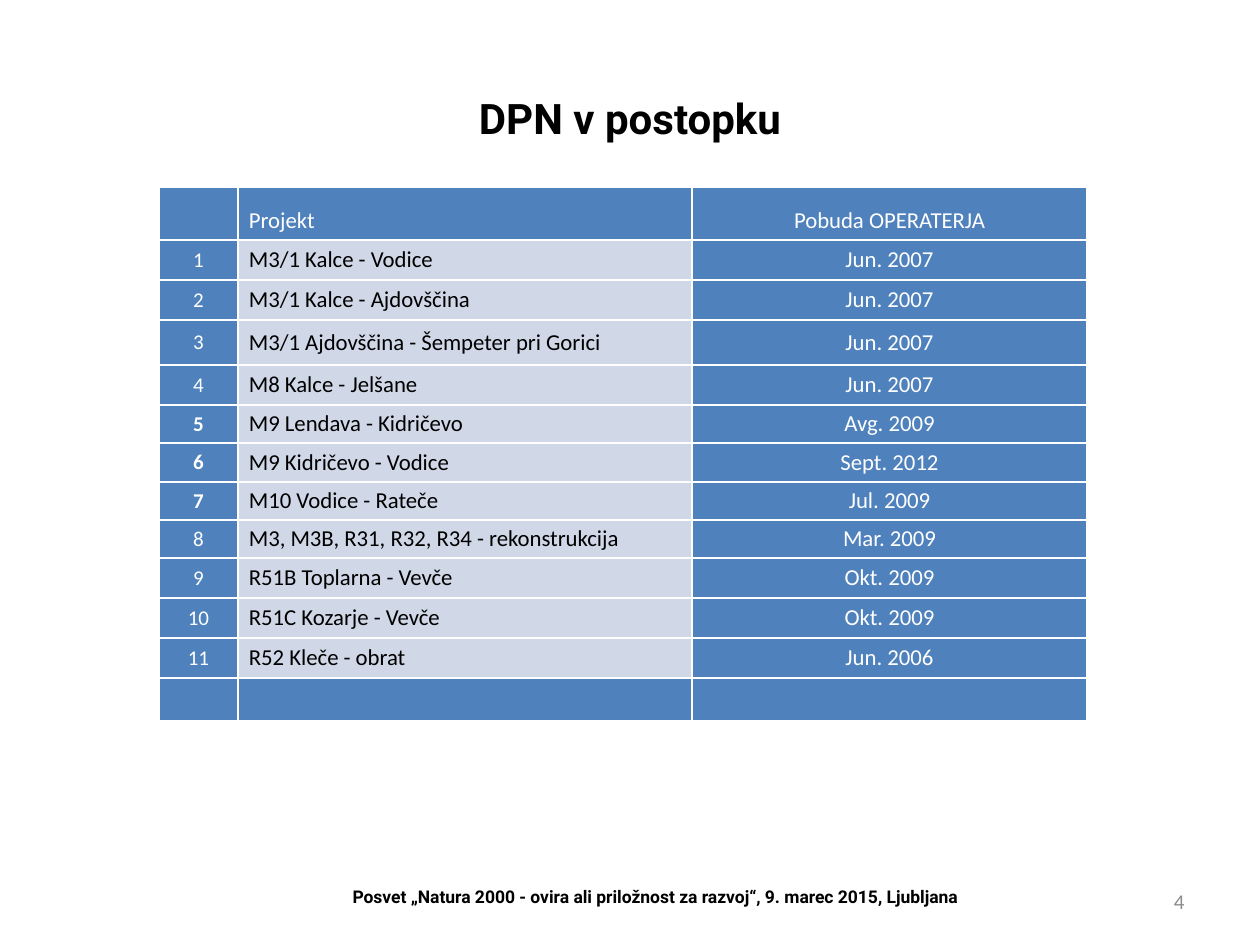
"""Build the slide listing the national spatial plans in progress."""
from dataclasses import dataclass

import pptx
import pptx.dml.color
import pptx.enum.text
import pptx.oxml
import pptx.oxml.ns
import pptx.util

ALIGN = pptx.enum.text.PP_ALIGN
MIDDLE = pptx.enum.text.MSO_ANCHOR.MIDDLE


@dataclass(frozen=True)
class Theme:
    heading_font: str = "Roboto"
    body_font: str = "Calibri"
    ink: str = "000000"
    paper: str = "FFFFFF"
    accent: str = "4F81BD"
    tint: str = "D0D8E8"
    muted: str = "8C8C8C"
    title_size: int = 24
    cell_size: int = 13
    number_size: int = 12
    footer_size: int = 10
    border_width: int = 1


def px(length):
    return pptx.util.Emu(round(length * 914400 / 126))


def rgb(value):
    return pptx.dml.color.RGBColor.from_string(value)


class SlideBuilder:
    def __init__(self, slide, theme):
        self.slide = slide
        self.theme = theme

    def set_text(self, frame, text, font, size, color, align, bold=False):
        frame.text = text
        paragraph = frame.paragraphs[0]
        paragraph.alignment = align
        for run in paragraph.runs:
            run.font.name = font
            run.font.size = pptx.util.Pt(size)
            run.font.bold = bold
            run.font.color.rgb = rgb(color)
        return paragraph

    def text(self, box, text, font, size, color, align, bold=False):
        frame = self.slide.shapes.add_textbox(*map(px, box)).text_frame
        frame.word_wrap = True
        frame.vertical_anchor = MIDDLE
        self.set_text(frame, text, font, size, color, align, bold)

    def borders(self, cell):
        properties = cell._tc.get_or_add_tcPr()
        width = pptx.util.Pt(self.theme.border_width)
        for position, side in enumerate(("lnL", "lnR", "lnT", "lnB")):
            properties.insert(position, pptx.oxml.parse_xml(
                f'<a:{side} {pptx.oxml.ns.nsdecls("a")} w="{width}"><a:solidFill>'
                f'<a:srgbClr val="{self.theme.paper}"/></a:solidFill></a:{side}>'))

    def cell(self, cell, text, size, fill, color, align, bold):
        cell.fill.solid()
        cell.fill.fore_color.rgb = rgb(fill)
        self.borders(cell)
        cell.vertical_anchor = MIDDLE
        cell.margin_left = cell.margin_right = px(11)
        cell.margin_top = cell.margin_bottom = 0
        return self.set_text(cell.text_frame, text, self.theme.body_font, size, color, align, bold)

    def table(self, left, top, widths, heights, header, projects, bold_numbers):
        theme = self.theme
        rows = [header, *projects, ("", "", "")]
        table = self.slide.shapes.add_table(
            len(rows), len(widths), px(left), px(top), px(sum(widths)), px(sum(heights))).table
        for column, width in zip(table.columns, widths):
            column.width = px(width)
        for row, height in zip(table.rows, heights):
            row.height = px(height)
        sizes = (theme.number_size, theme.cell_size, theme.cell_size)
        aligns = (ALIGN.CENTER, ALIGN.LEFT, ALIGN.CENTER)
        for r, values in enumerate(rows):
            for c, value in enumerate(values):
                is_project = c == 1 and 0 < r <= len(projects)
                align = ALIGN.LEFT if c == 1 else aligns[c]
                paragraph = self.cell(
                    table.cell(r, c), value, sizes[c],
                    theme.tint if is_project else theme.accent,
                    theme.ink if is_project else theme.paper,
                    align, c == 0 and r in bold_numbers)
                if r == 0:
                    paragraph.line_spacing = 1.5


def main():
    presentation = pptx.Presentation()
    presentation.slide_width, presentation.slide_height = px(1260), px(945)
    theme = Theme()
    builder = SlideBuilder(presentation.slides.add_slide(presentation.slide_layouts[6]), theme)

    initiatives = [
        ("M3/1 Kalce - Vodice", "Jun. 2007"),
        ("M3/1 Kalce - Ajdovščina", "Jun. 2007"),
        ("M3/1 Ajdovščina - Šempeter pri Gorici", "Jun. 2007"),
        ("M8 Kalce - Jelšane", "Jun. 2007"),
        ("M9 Lendava - Kidričevo", "Avg. 2009"),
        ("M9 Kidričevo - Vodice", "Sept. 2012"),
        ("M10 Vodice - Rateče", "Jul. 2009"),
        ("M3, M3B, R31, R32, R34 - rekonstrukcija", "Mar. 2009"),
        ("R51B Toplarna - Vevče", "Okt. 2009"),
        ("R51C Kozarje - Vevče", "Okt. 2009"),
        ("R52 Kleče - obrat", "Jun. 2006"),
    ]
    projects = [(str(number), *entry) for number, entry in enumerate(initiatives, 1)]

    builder.text((903, 876, 294, 50), "4", theme.body_font, theme.number_size,
                 theme.muted, ALIGN.RIGHT)
    builder.text((0, 39, 1260, 158), "DPN v postopku", theme.heading_font,
                 theme.title_size, theme.ink, ALIGN.CENTER, bold=True)
    builder.table(159, 187, (79, 454, 395),
                  (53, 40, 40, 45, 40, 38, 39, 38, 38, 40, 40, 40, 43),
                  ("", "Projekt", "Pobuda OPERATERJA"), projects, bold_numbers=(5, 6, 7))
    builder.text((144, 872, 1022, 50),
                 "Posvet „Natura 2000 - ovira ali priložnost za razvoj“, 9. marec 2015, Ljubljana",
                 theme.heading_font, theme.footer_size, theme.ink, ALIGN.CENTER, bold=True)
    presentation.save("out.pptx")


if __name__ == "__main__":
    main()
